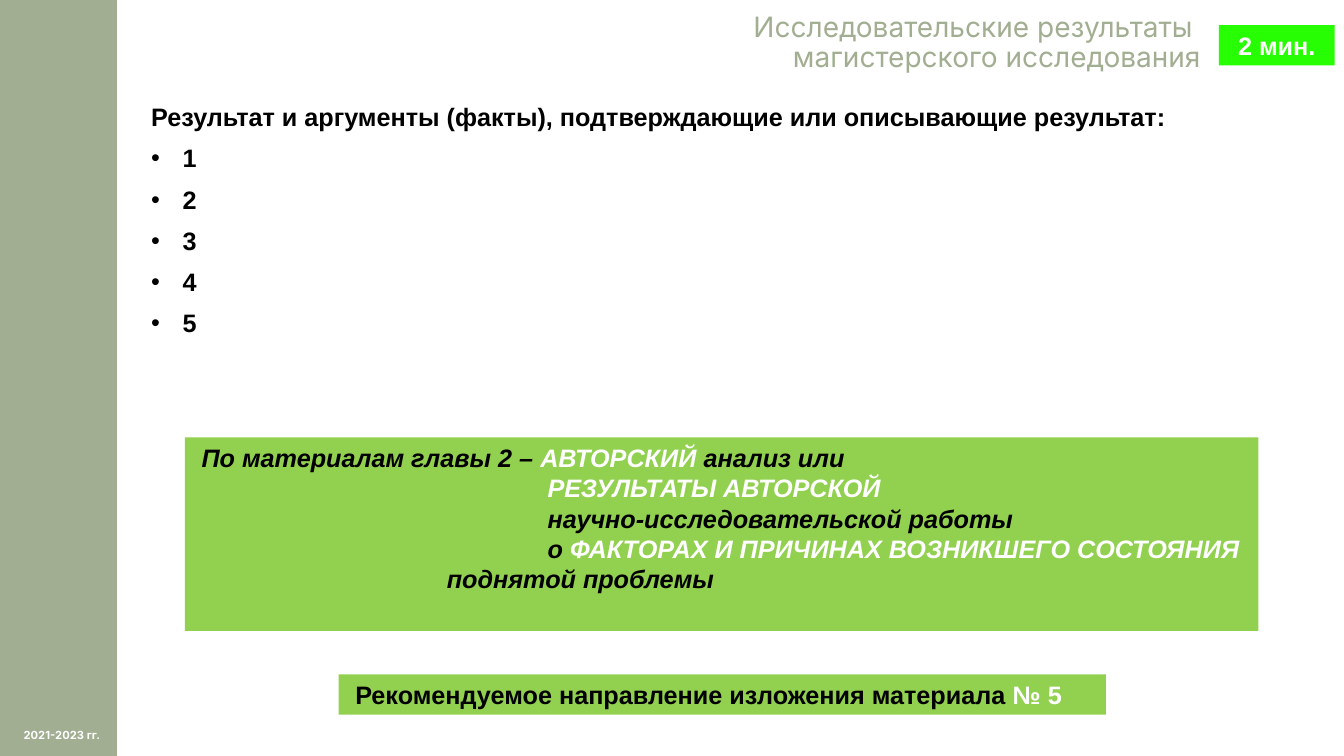
from dataclasses import dataclass

from lxml import etree
from pptx import Presentation, util as u
from pptx.dml.color import RGBColor
from pptx.enum import shapes, text
from pptx.oxml.ns import qn

WIDTH, HEIGHT = u.Inches(13.33), u.Inches(7.5)
COLUMNS, ROWS = 160, 90


@dataclass(frozen=True)
class Theme:
    sage: str = "A2AE91"
    green: str = "92D050"
    lime: str = "27FD03"
    black: str = "000000"
    white: str = "FFFFFF"
    body_font: str = "Arial"
    accent_font: str = "Inter"
    title_size: int = 20
    body_size: int = 18
    small_size: int = 8


THEME = Theme()


def columns(count):
    return round(WIDTH * count / COLUMNS)


def rows(count):
    return round(HEIGHT * count / ROWS)


def area(left, top, width, height):
    return columns(left), rows(top), columns(width), rows(height)


def set_font(font, color, size=THEME.body_size, name=THEME.body_font,
             bold=True, italic=False):
    font.name, font.size = name, u.Pt(size)
    font.bold, font.italic = bold, italic
    font.color.rgb = RGBColor.from_string(color)


def prepare_frame(frame, inset=1.2, vertical_inset=0.6,
                  anchor=text.MSO_ANCHOR.TOP):
    frame.word_wrap = True
    frame.auto_size = text.MSO_AUTO_SIZE.NONE
    frame.vertical_anchor = anchor
    frame.margin_left = columns(inset)
    frame.margin_right = columns(min(inset, 1.2))
    frame.margin_top = frame.margin_bottom = rows(vertical_inset)


def paragraphs(frame, count):
    """Return the first paragraph and as many new ones as are needed."""
    return [frame.paragraphs[0]] + [frame.add_paragraph()
                                    for _ in range(count - 1)]


def indent(para, left, first=0):
    properties = para._p.get_or_add_pPr()
    properties.set("marL", str(columns(left)))
    properties.set("indent", str(columns(first)))
    return properties


def add_panel(page, place, color, inset=1.2):
    panel = page.shapes.add_shape(shapes.MSO_SHAPE.RECTANGLE, *area(*place))
    panel.shadow.inherit = False
    panel.fill.solid()
    panel.fill.fore_color.rgb = RGBColor.from_string(color)
    panel.line.fill.background()
    prepare_frame(panel.text_frame, inset)
    return panel.text_frame


def add_label(page, place, **frame_options):
    box = page.shapes.add_textbox(*area(*place))
    prepare_frame(box.text_frame, **frame_options)
    return box.text_frame


def write_line(para, text_line, color, align=text.PP_ALIGN.LEFT, **font):
    para.alignment = align
    para.add_run().text = text_line
    set_font(para.font, color, **font)


def write_accented(para, spans, italic=False):
    """Write black and white spans by turns, starting with black."""
    para.alignment = text.PP_ALIGN.LEFT
    set_font(para.font, THEME.black, italic=italic)
    for number, words in enumerate(spans):
        if words:
            span = para.add_run()
            span.text = words
            color = THEME.white if number % 2 else THEME.black
            span.font.color.rgb = RGBColor.from_string(color)


def write_title(page, lines):
    title = page.shapes.title
    title.left, title.top, title.width, title.height = area(15, 1.56, 127.95, 8.4)
    prepare_frame(title.text_frame, inset=0, vertical_inset=0)
    for para, line in zip(paragraphs(title.text_frame, len(lines)), lines):
        write_line(para, line, THEME.sage, text.PP_ALIGN.RIGHT,
                   size=THEME.title_size, name=THEME.accent_font, bold=False)
        para.line_spacing = 0.9


def add_results(page, heading, items):
    frame = add_label(page, (16.8, 11.88, 139.95, 69.72))
    first, *bullets = paragraphs(frame, len(items) + 1)
    write_line(first, heading, THEME.black)
    first.line_spacing = 0.9
    for para, item in zip(bullets, items):
        para.line_spacing, para.space_before = 0.9, u.Pt(10)
        properties = indent(para, 3.75, -3.75)
        etree.SubElement(properties, qn("a:buFont"), typeface=THEME.body_font)
        etree.SubElement(properties, qn("a:buChar"), char="•")
        write_line(para, item, THEME.black)


def add_guidance(page, lines):
    """Add the large panel; each line is an indent and its spans."""
    frame = add_panel(page, (22, 52.08, 127.8, 23.04), THEME.green, inset=2)
    for para, (left, spans) in zip(paragraphs(frame, len(lines)), lines):
        indent(para, left)
        write_accented(para, spans, italic=True)


def add_sidebar(page, years):
    add_panel(page, (0, 0, 13.92, ROWS), THEME.sage)
    label = add_label(page, (0.84, 85.08, 13.08, 4.92),
                      anchor=text.MSO_ANCHOR.MIDDLE)
    write_line(label.paragraphs[0], years, THEME.white, text.PP_ALIGN.CENTER,
               size=THEME.small_size, name=THEME.accent_font)


def main():
    deck = Presentation()
    deck.slide_width, deck.slide_height = WIDTH, HEIGHT
    page = deck.slides.add_slide(deck.slide_layouts[5])

    add_sidebar(page, "2021-2023 гг.")
    write_title(page, ["Исследовательские результаты ",
                       "магистерского исследования"])
    add_results(page, "Результат и аргументы (факты), подтверждающие "
                      "или описывающие результат:", "12345")
    add_guidance(page, [
        (0, ["По материалам главы 2 – ", "АВТОРСКИЙ ", "анализ или"]),
        (41.2, ["", "РЕЗУЛЬТАТЫ АВТОРСКОЙ"]),
        (41.2, ["научно-исследовательской работы"]),
        (41.2, ["о ", "ФАКТОРАХ И ПРИЧИНАХ ВОЗНИКШЕГО СОСТОЯНИЯ"]),
        (29.2, ["поднятой проблемы"]),
    ])
    badge = add_panel(page, (145.1, 3, 13.8, 4.8), THEME.lime)
    write_line(badge.paragraphs[0], "2 мин.", THEME.white, text.PP_ALIGN.CENTER)
    direction = add_panel(page, (40.3, 80.28, 91.35, 4.8), THEME.green, inset=2)
    write_accented(direction.paragraphs[0],
                   ["Рекомендуемое направление изложения материала ", "№ 5"])

    deck.save("out.pptx")


if __name__ == "__main__":
    main()
